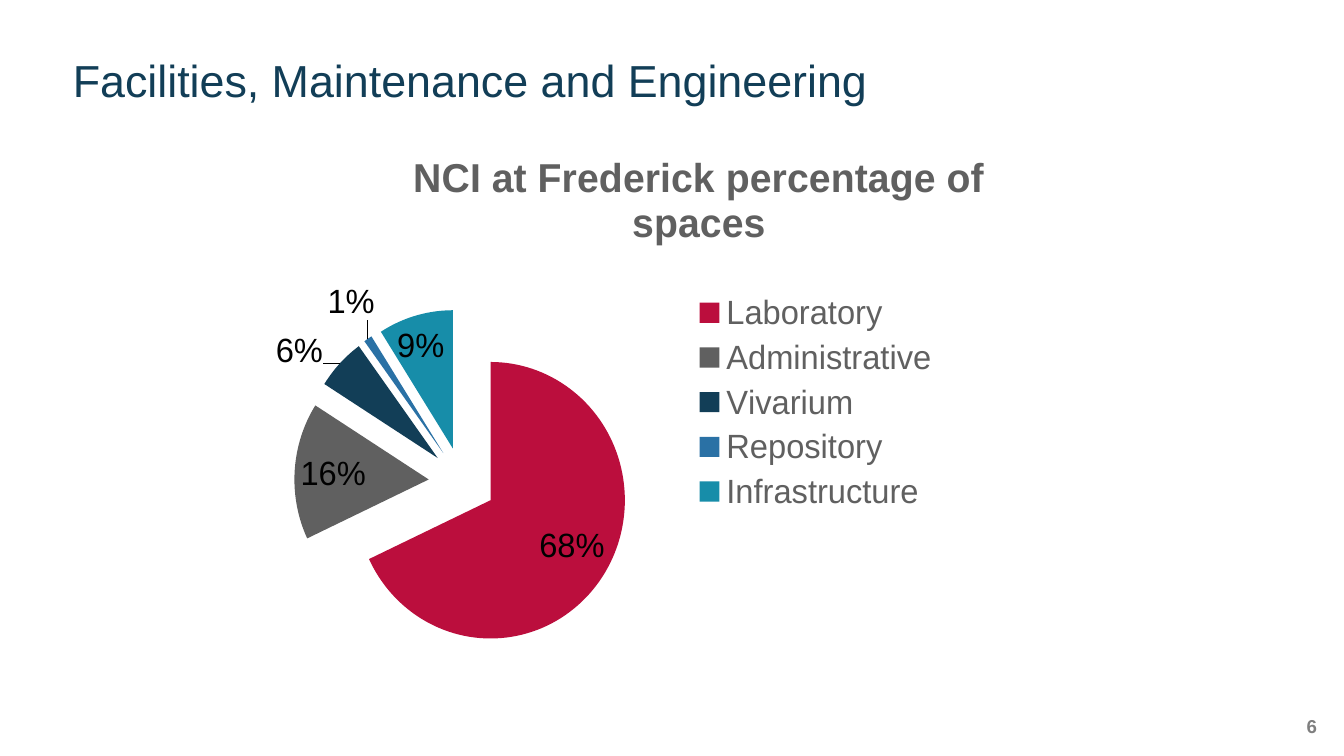
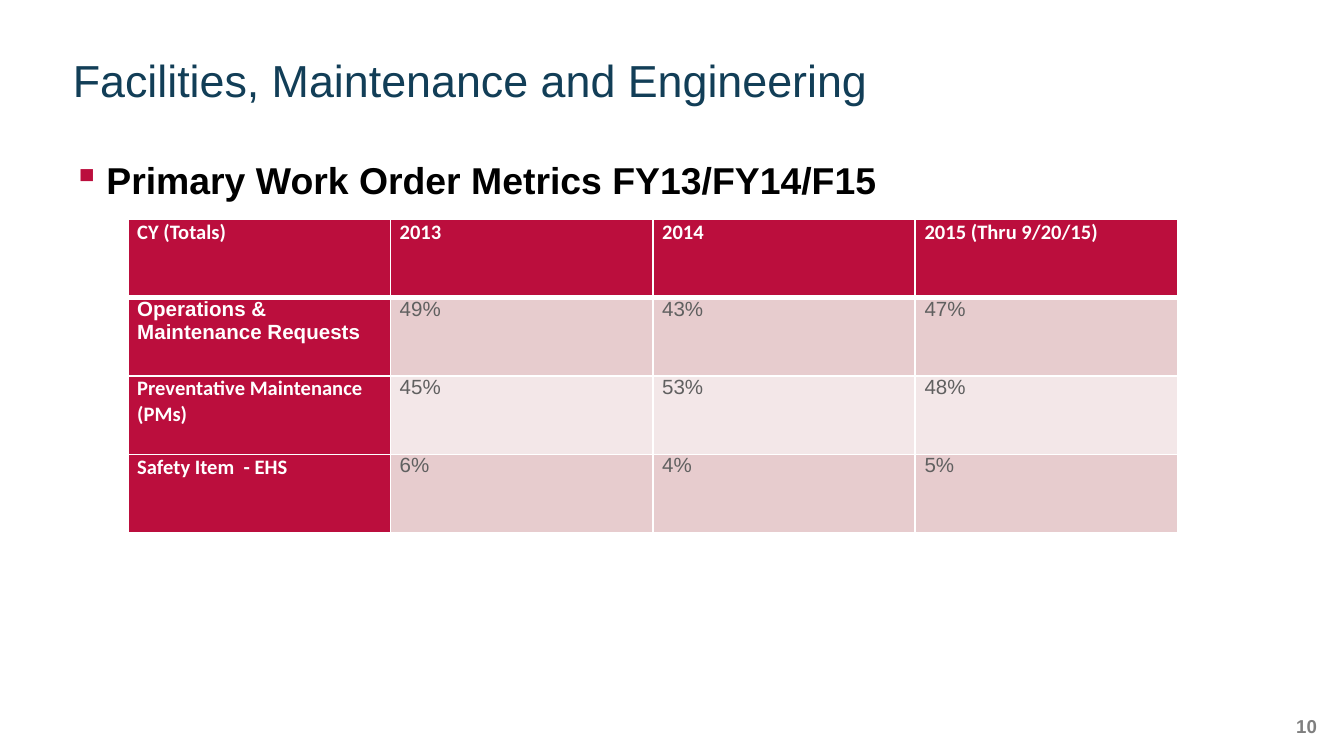
from lxml import etree
from pptx import Presentation
from pptx.chart.data import CategoryChartData
from pptx.dml.color import RGBColor
from pptx.enum import chart as ch, text
from pptx.oxml import ns
from pptx.util import Pt

NAVY = RGBColor(0x12, 0x3E, 0x57)
CRIMSON = RGBColor(0xBB, 0x0E, 0x3D)
GRAY = RGBColor(0x60, 0x60, 0x60)
BLUE = RGBColor(0x2A, 0x71, 0xA5)
TEAL = RGBColor(0x17, 0x8D, 0xA9)
FOOTER_GRAY = RGBColor(0x7F, 0x7F, 0x7F)
ROSE = RGBColor(0xE7, 0xCC, 0xCE)
PALE_ROSE = RGBColor(0xF3, 0xE7, 0xE8)
WHITE = RGBColor(0xFF, 0xFF, 0xFF)
BLACK = RGBColor(0, 0, 0)


def style(font, size, color, bold=False, name="Arial"):
    font.size = Pt(size)
    font.name = name
    font.bold = bold
    font.color.rgb = color


def add_text(slide, left, top, width, height, words, size, color, bold=False):
    frame = slide.shapes.add_textbox(Pt(left), Pt(top), Pt(width), Pt(height)).text_frame
    frame.margin_left = frame.margin_right = frame.margin_top = frame.margin_bottom = 0
    frame.word_wrap = True
    frame.text = words
    style(frame.paragraphs[0].runs[0].font, size, color, bold)
    return frame


prs = Presentation()
prs.slide_width, prs.slide_height = Pt(720), Pt(405)

slides = []
for number in (6, 10):
    slide = prs.slides.add_slide(prs.slide_layouts[6])
    page = add_text(slide, 681, 383, 24.5, 14.5, str(number), 10, FOOTER_GRAY, True)
    page.paragraphs[0].alignment = text.PP_ALIGN.RIGHT
    heading = add_text(slide, 39, 32, 643, 25.2,
                       "Facilities, Maintenance and Engineering", 24, NAVY)
    heading.vertical_anchor = text.MSO_ANCHOR.BOTTOM
    heading.paragraphs[0].line_spacing = 0.9
    slides.append(slide)
spaces_slide, metrics_slide = slides

spaces = {
    "Laboratory": (68, CRIMSON),
    "Administrative": (16, GRAY),
    "Vivarium": (6, NAVY),
    "Repository": (1, BLUE),
    "Infrastructure": (9, TEAL),
}
space_data = CategoryChartData()
space_data.categories = list(spaces)
space_data.add_series("Series 1", [share for share, color in spaces.values()])
pie = spaces_slide.shapes.add_chart(
    ch.XL_CHART_TYPE.PIE_EXPLODED, Pt(88.5), Pt(68.5), Pt(443), Pt(294), space_data).chart
style(pie.font, 18, GRAY)
pie.has_title = True
pie.chart_title.text_frame.text = "NCI at Frederick percentage of spaces"
style(pie.chart_title.text_frame.paragraphs[0].runs[0].font, 21.6, GRAY, True)
pie.has_legend = True
pie.legend.position = ch.XL_LEGEND_POSITION.RIGHT
pie.legend.include_in_layout = False
style(pie.legend.font, 18, GRAY)

plot = pie.plots[0]
plot.vary_by_categories = True
for index, (share, color) in enumerate(spaces.values()):
    fill = plot.series[0].points[index].format.fill
    fill.solid()
    fill.fore_color.rgb = color
series_xml = plot.series[0]._element
for explosion in series_xml.findall(ns.qn("c:explosion")):
    explosion.set("val", "25")
plot.has_data_labels = True
labels = plot.data_labels
labels.show_percentage = True
labels.show_value = False
labels.number_format = "0%"
labels.number_format_is_linked = False
labels.position = ch.XL_LABEL_POSITION.BEST_FIT
style(labels.font, 18, BLACK)

for part, place, box in (
    ("title", 1, {"x": 0.3, "y": 0.03}),
    ("plotArea", 0, {"x": 0.16, "y": 0.33, "w": 0.42, "h": 0.63}),
    ("legend", 1, {"x": 0.66, "y": 0.29, "w": 0.3, "h": 0.42}),
):
    part_xml = pie.element.xpath(f"c:chart/c:{part}")[0]
    for old in part_xml.findall(ns.qn("c:layout")):
        part_xml.remove(old)
    layout = etree.Element(ns.qn("c:layout"))
    manual = etree.SubElement(layout, ns.qn("c:manualLayout"))
    if part == "plotArea":
        etree.SubElement(manual, ns.qn("c:layoutTarget"), val="inner")
    for side in "xy":
        etree.SubElement(manual, ns.qn(f"c:{side}Mode"), val="edge")
    for side, value in box.items():
        etree.SubElement(manual, ns.qn(f"c:{side}"), val=str(value))
    part_xml.insert(place, layout)

metrics = add_text(metrics_slide, 39, 84, 643, 284,
                   "Primary Work Order Metrics FY13/FY14/F15", 20, BLACK, True).paragraphs[0]
metrics.space_after = Pt(10)
bullet = metrics._p.get_or_add_pPr()
bullet.set("marL", str(Pt(18)))
bullet.set("indent", str(-Pt(18)))
bullet_color = etree.SubElement(bullet, ns.qn("a:buClr"))
etree.SubElement(bullet_color, ns.qn("a:srgbClr"), val=str(CRIMSON))
etree.SubElement(bullet, ns.qn("a:buChar"), char="▪")

work_orders = (
    ("CY (Totals)", "2013", "2014", "2015 (Thru 9/20/15)"),
    ("Operations & Maintenance Requests", "49%", "43%", "47%"),
    ("Preventative Maintenance (PMs)", "45%", "53%", "48%"),
    ("Safety Item  - EHS", "6%", "4%", "5%"),
)
order_table = metrics_slide.shapes.add_table(
    4, 4, Pt(68.5), Pt(117.5), Pt(562.4), Pt(168)).table
for column in order_table.columns:
    column.width = Pt(140.6)
for r, row in enumerate(work_orders):
    order_table.rows[r].height = Pt(42)
    for c, words in enumerate(row):
        cell = order_table.cell(r, c)
        cell.margin_left = cell.margin_right = Pt(5)
        cell.margin_top = cell.margin_bottom = 0
        cell_xml = cell._tc.get_or_add_tcPr()
        for side in "LRTB":
            thick = (r, side) in ((0, "B"), (1, "T"))
            border = etree.SubElement(cell_xml, ns.qn(f"a:ln{side}"), w=str(Pt(3 if thick else 1)))
            border_fill = etree.SubElement(border, ns.qn("a:solidFill"))
            etree.SubElement(border_fill, ns.qn("a:srgbClr"), val=str(WHITE))
        is_header = r == 0 or c == 0
        cell.fill.solid()
        cell.fill.fore_color.rgb = CRIMSON if is_header else ROSE if r % 2 else PALE_ROSE
        cell.text_frame.text = words
        face = "Calibri" if is_header and r != 1 else "Arial"
        style(cell.text_frame.paragraphs[0].runs[0].font, 11,
              WHITE if is_header else GRAY, is_header, face)

prs.save("out.pptx")
